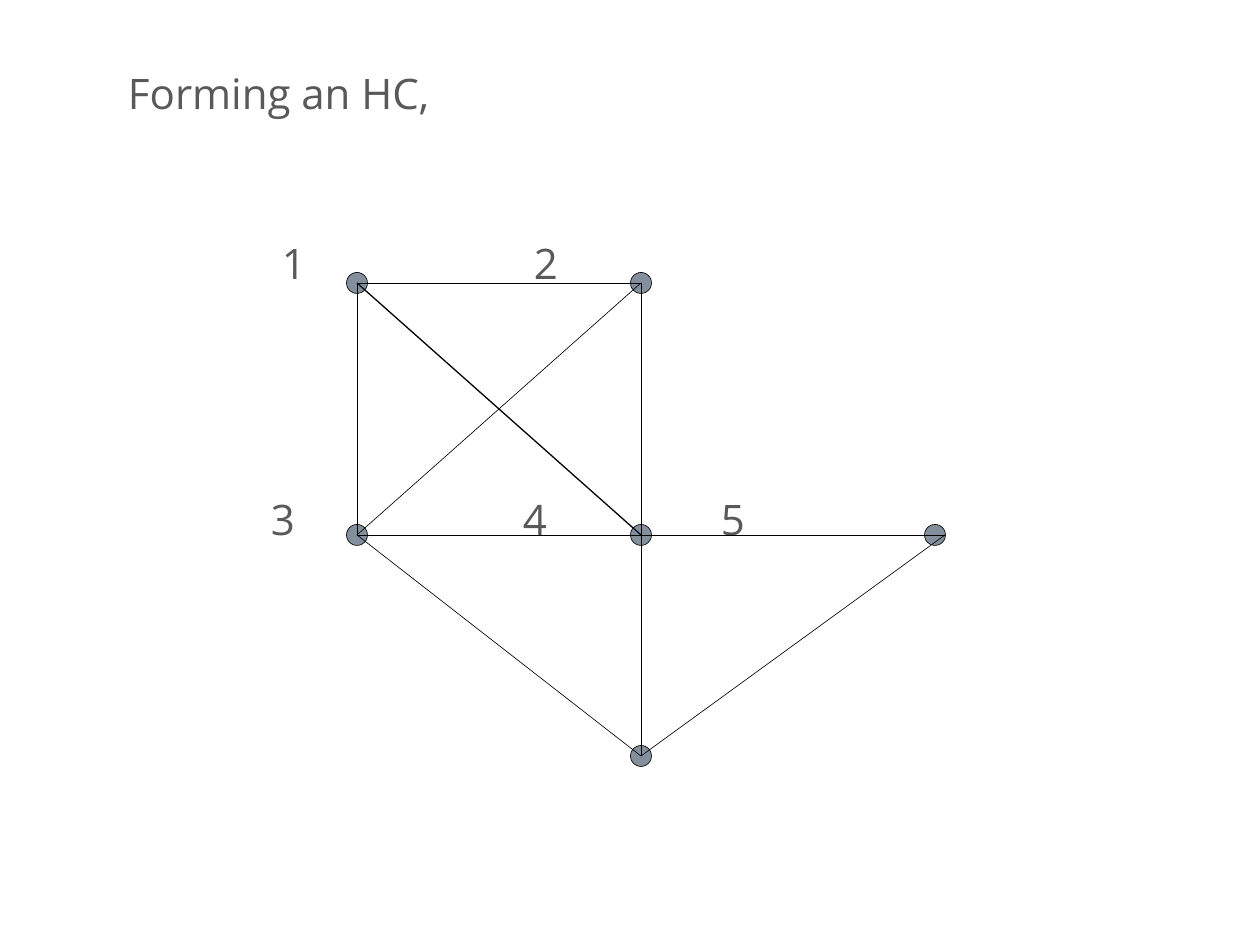
"""Draw a six-vertex graph for the Hamiltonian cycle slide."""
from dataclasses import dataclass

import lxml.etree
import pptx
import pptx.dml.color
import pptx.enum.shapes
import pptx.enum.text
import pptx.oxml.ns
import pptx.util


@dataclass(frozen=True)
class Theme:
    font: str = "Open Sans"
    size: float = 24
    text: str = "595959"
    ink: str = "000000"
    node: str = "09213B"
    node_alpha: int = 50
    thin: float = 0.37
    thick: float = 0.75


def px(n):
    return pptx.util.Emu(n * 914400 // 126)


def rgb(value):
    return pptx.dml.color.RGBColor.from_string(value)


class Canvas:
    def __init__(self, slide, theme):
        self.s = slide
        self.theme = theme

    def text(self, content, x, y, w, h=58, align="LEFT"):
        tf = self.s.shapes.add_textbox(px(x), px(y), px(w), px(h)).text_frame
        tf.word_wrap = True
        tf.margin_left = tf.margin_right = tf.margin_top = tf.margin_bottom = 0
        p = tf.paragraphs[0]
        p.text = content
        p.alignment = getattr(pptx.enum.text.PP_ALIGN, align)
        p.font.name = self.theme.font
        p.font.size = pptx.util.Pt(self.theme.size)
        p.font.color.rgb = rgb(self.theme.text)

    def stroke(self, line, width):
        line.color.rgb = rgb(self.theme.ink)
        line.width = pptx.util.Pt(width)

    def node(self, center, d=21):
        x, y = (px(v) - px(d) // 2 for v in center)
        kind = pptx.enum.shapes.MSO_SHAPE.FLOWCHART_CONNECTOR
        sp = self.s.shapes.add_shape(kind, x, y, px(d), px(d))
        sp.shadow.inherit = False
        sp.fill.solid()
        sp.fill.fore_color.rgb = rgb(self.theme.node)
        qn = pptx.oxml.ns.qn
        color = sp.fill._xPr.find(qn("a:solidFill")).find(qn("a:srgbClr"))
        alpha = lxml.etree.SubElement(color, qn("a:alpha"))
        alpha.set("val", str(self.theme.node_alpha * 1000))
        self.stroke(sp.line, self.theme.thin)

    def edge(self, start, end, width):
        kind = pptx.enum.shapes.MSO_CONNECTOR.STRAIGHT
        c = self.s.shapes.add_connector(kind, *map(px, start + end))
        lxml.etree.SubElement(c._element.spPr, pptx.oxml.ns.qn("a:effectLst"))
        self.stroke(c.line, width)
        effects = c._element.spPr.find(pptx.oxml.ns.qn("a:effectLst"))
        c._element.spPr.append(effects)


def main():
    prs = pptx.Presentation()
    prs.slide_width, prs.slide_height = px(1260), px(945)
    theme = Theme()
    canvas = Canvas(prs.slides.add_slide(prs.slide_layouts[6]), theme)

    left, middle, right = 357, 641, 935
    top, center, bottom = 283, 535, 756
    nodes = {
        "1": (left, top), "2": (middle, top), "3": (left, center),
        "4": (middle, center), "5": (right, center), "6": (middle, bottom),
    }
    right_edge = (945, center)
    upper, lower = 237, 493
    labels = {"1": (294, upper), "2": (546, upper), "3": (283, lower),
              "4": (535, lower), "5": (733, lower)}

    canvas.text("Forming an HC,", 128, 67, 600)
    for name, (x, y) in labels.items():
        canvas.text(name, x - 20, y, 40, align="CENTER")

    canvas.edge(nodes["1"], nodes["4"], theme.thick)
    for point in nodes.values():
        canvas.node(point)
    for a, b in ("32", "46", "12", "24", "13", "34", "36"):
        canvas.edge(nodes[a], nodes[b], theme.thin)
    for name in "64":
        canvas.edge(nodes[name], right_edge, theme.thin)

    prs.save("out.pptx")


if __name__ == "__main__":
    main()
